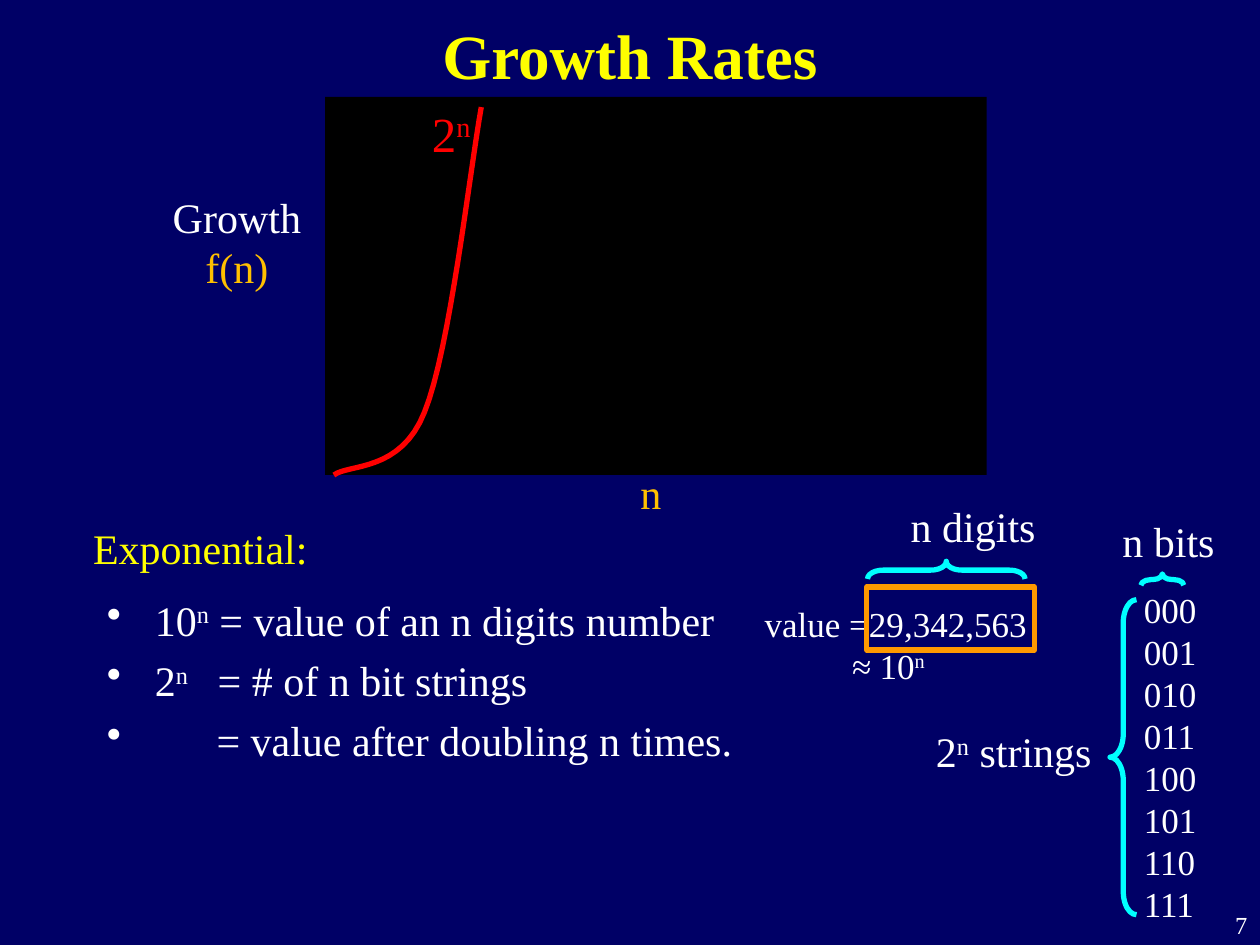
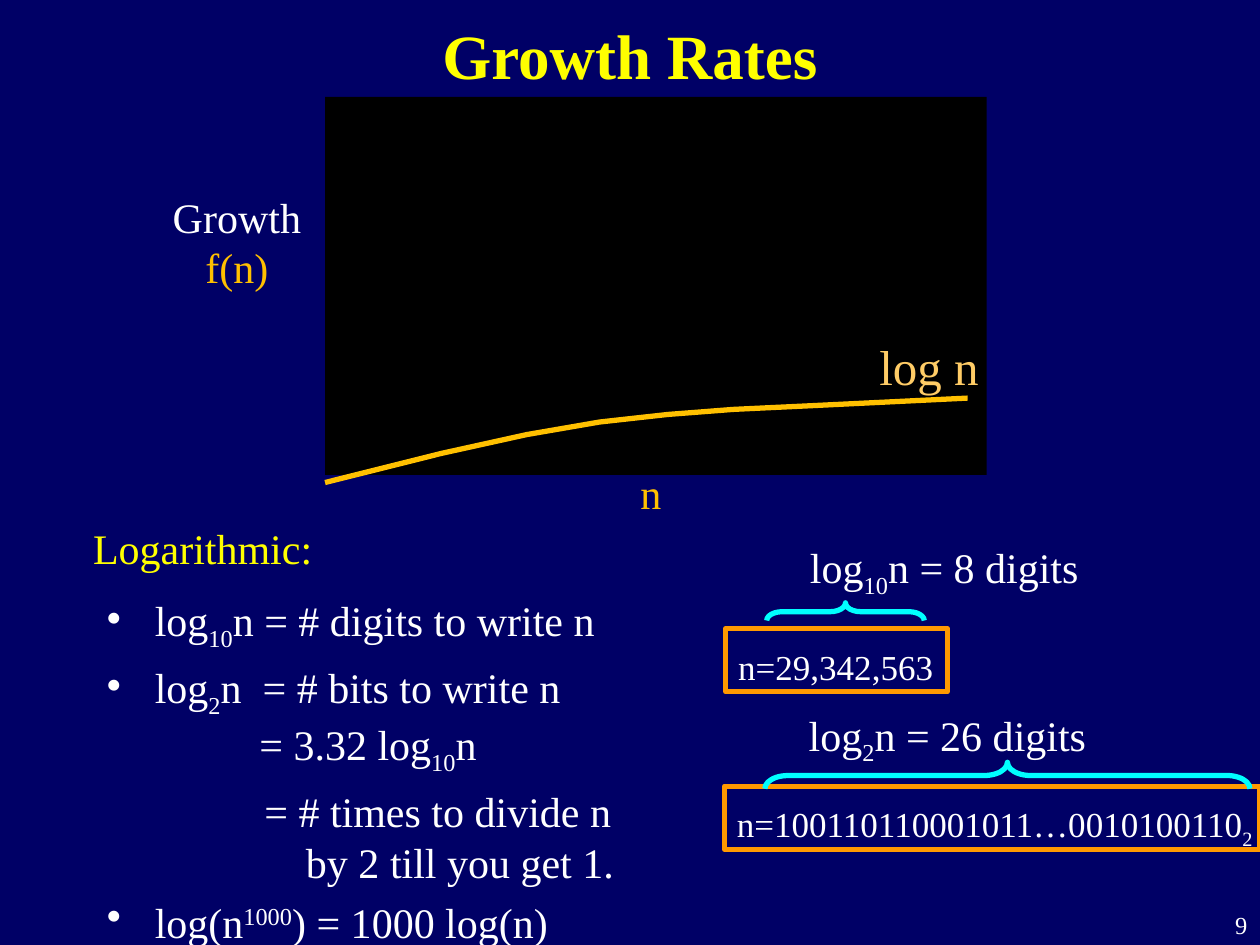
from dataclasses import dataclass, field
from typing import Any

from pptx import Presentation
from pptx import util as u
from pptx.dml.color import RGBColor
from pptx.enum import shapes, text
from pptx.oxml import ns, xmlchemy

PX = 9144
FONT = "Times New Roman"
NAVY = RGBColor(0x00, 0x00, 0x66)
BLACK = RGBColor(0x00, 0x00, 0x00)
WHITE = RGBColor(0xFF, 0xFF, 0xFF)
YELLOW = RGBColor(0xFF, 0xFF, 0x00)
GOLD = RGBColor(0xFF, 0xC0, 0x00)
SAND = RGBColor(0xFF, 0xCC, 0x66)
ORANGE = RGBColor(0xFF, 0x99, 0x00)
CYAN = RGBColor(0x00, 0xFF, 0xFF)
RED = RGBColor(0xFF, 0x00, 0x00)
LEFT, MID, RIGHT = text.PP_ALIGN.LEFT, text.PP_ALIGN.CENTER, text.PP_ALIGN.RIGHT
HANG = 38
GAP = u.Pt(5.5)

Box = tuple[int, int, int, int]
Point = tuple[float, float]


@dataclass
class Run:
    words: str
    marks: dict[str, str] = field(default_factory=dict)


@dataclass
class Para:
    runs: list[Run | str]
    left: int = 0
    dot: bool = False
    gap: int = 0
    color: RGBColor | None = None


@dataclass
class Label:
    box: Box
    paras: list[Para]
    size: int = 24
    color: RGBColor = WHITE
    align: Any = LEFT
    bold: bool = False
    wrap: bool = False
    grow: bool = True
    side: int = 10


@dataclass
class Brace:
    box: Box
    turn: int = 90


@dataclass
class Curve:
    points: list[Point]
    color: RGBColor


def sup(words: str) -> Run:
    return Run(words, {"baseline": "30000"})


def sub(words: str) -> Run:
    return Run(words, {"baseline": "-25000"})


def wide(points: int) -> Run:
    return Run(" ", {"spc": str(points * 100)})


def line(*runs: Run | str, **style: Any) -> Para:
    return Para(list(runs), **style)


def item(*runs: Run | str, left: int = HANG, gap: int = GAP) -> Para:
    return Para(list(runs), left, True, gap)


def apply(target: Any, values: dict[str, Any]) -> None:
    for name, value in values.items():
        setattr(target, name, value)


def scale(box: Box) -> list[int]:
    return [n * PX for n in box]


def write(slide: Any, label: Label) -> None:
    frame = slide.shapes.add_textbox(*scale(label.box)).text_frame
    fit = text.MSO_AUTO_SIZE
    apply(frame, {
        "word_wrap": label.wrap,
        "auto_size": fit.SHAPE_TO_FIT_TEXT if label.grow else fit.NONE,
        "vertical_anchor": text.MSO_ANCHOR.TOP,
        "margin_left": label.side * PX, "margin_right": label.side * PX,
        "margin_top": 5 * PX, "margin_bottom": 5 * PX,
    })
    for i, para in enumerate(label.paras):
        p = frame.add_paragraph() if i else frame.paragraphs[0]
        apply(p, {"alignment": label.align, "space_before": para.gap})
        props = p._p.get_or_add_pPr()
        props.set("marL", str(para.left * PX))
        props.set("indent", str(-para.left * PX if para.dot else 0))
        if para.dot:
            bullet = xmlchemy.OxmlElement("a:buChar")
            bullet.set("char", "•")
            props.append(bullet)
        for part in para.runs:
            run = part if isinstance(part, Run) else Run(part)
            r = p.add_run()
            r.text = run.words
            apply(r.font, {"name": FONT, "size": u.Pt(label.size), "bold": label.bold})
            r.font.color.rgb = para.color or label.color
            for name, value in run.marks.items():
                r._r.get_or_add_rPr().set(name, value)


def paint(shape: Any, fill: RGBColor | None, edge: RGBColor | None) -> None:
    shape.shadow.inherit = False
    if fill is None:
        shape.fill.background()
    else:
        shape.fill.solid()
        shape.fill.fore_color.rgb = fill
    if edge is None:
        shape.line.fill.background()
    else:
        shape.line.color.rgb = edge
        shape.line.width = u.Pt(3)


def frame(slide: Any, box: Box, fill: RGBColor | None, edge: RGBColor | None) -> None:
    shape = slide.shapes.add_shape(shapes.MSO_SHAPE.RECTANGLE, *scale(box))
    paint(shape, fill, edge)


def brace(slide: Any, mark: Brace) -> None:
    shape = slide.shapes.add_shape(shapes.MSO_SHAPE.LEFT_BRACE, *scale(mark.box))
    shape.rotation = mark.turn
    shape.adjustments[0] = 0.875
    paint(shape, None, CYAN)


def draw(slide: Any, curve: Curve) -> None:
    spots = [(round(x * PX), round(y * PX)) for x, y in curve.points]
    path = slide.shapes.build_freeform(*spots[0])
    path.add_line_segments(spots[1:], close=False)
    paint(path.convert_to_shape(), None, curve.color)


def bend(a: Point, b: Point, c: Point, d: Point, steps: int = 16) -> list[Point]:
    def mix(t: float, k: int) -> float:
        s = 1 - t
        return s**3 * a[k] + 3 * s * s * t * b[k] + 3 * s * t * t * c[k] + t**3 * d[k]

    return [(mix(i / steps, 0), mix(i / steps, 1)) for i in range(steps + 1)]


@dataclass
class Page:
    number: int
    topic: str
    body: Label
    labels: list[Label]
    frames: list[Box]
    braces: list[Brace]
    curve: Curve


RISE = bend((265, 377), (277, 368), (318, 375), (337, 327))
RISE += bend((337, 327), (357, 278), (373, 135), (382, 85))[1:]
CREEP = [(768, 316), (645, 322), (582, 325), (530, 329),
         (476, 335), (418, 345), (350, 360), (258, 383)]

PAGES = [
    Page(
        7, "Exponential:",
        Label((75, 467, 548, 350), [
            item("10", sup("n"), " = value of an n digits number", gap=0),
            item("2", sup("n"), wide(11), "= # of n bit strings"),
            item("= value after doubling n times.", left=87),
        ], wrap=True, grow=False),
        [
            Label((597, 473, 230, 77), [
                line("value =29,342,563"),
                line(Run("≈ ", {"i": "1"}), "10", sup("n"), left=69),
            ], 20),
            Label((713, 392, 120, 50), [line("n digits")]),
            Label((898, 462, 62, 313), [line(f"{n:03b}") for n in range(8)], 20),
            Label((881, 404, 94, 50), [line("n bits")]),
            Label((733, 571, 149, 50), [line("2", sup("n"), " strings")]),
            Label((333, 77, 53, 57), [line("2", sup("n"))], 28, RED),
        ],
        [(688, 466, 133, 50)],
        [Brace((744, 390, 14, 125)), Brace((918, 443, 9, 34)), Brace((881, 476, 21, 250), 0)],
        Curve(RISE, RED),
    ),
    Page(
        9, "Logarithmic:",
        Label((75, 467, 475, 350), [
            item("log", sub("10"), "n = # digits to write n", gap=0),
            item("log", sub("2"), "n", wide(6), "= # bits to write n"),
            line("= 3.32 log", sub("10"), "n", left=121),
            line("= # times to divide n", left=125, gap=GAP),
            line("by 2 till you get 1.", left=158),
            item("log(n", sup("1000"), ") = 1000 log(n)"),
        ], wrap=True, grow=False),
        [
            Label((668, 262, 140, 57), [line("log n")], 28, SAND, side=30),
            Label((576, 507, 176, 44), [line("n=29,342,563")], 20),
            Label((633, 425, 238, 50), [line("log", sub("10"), "n = 8 digits")]),
            Label((575, 632, 434, 44), [line("n=100110110001011…0010100110", sub("2"))], 20),
            Label((632, 558, 244, 50), [line("log", sub("2"), "n = 26 digits")]),
        ],
        [(576, 499, 176, 50), (575, 624, 425, 50)],
        [Brace((664, 423, 14, 125)), Brace((789, 423, 21, 385))],
        Curve(CREEP, GOLD),
    ),
]


def base(slide: Any, page: Page) -> None:
    frame(slide, (258, 77, 525, 300), BLACK, None)
    for label in (
        Label((950, 717, 50, 33), [line(str(page.number))], 14, align=RIGHT,
              wrap=True, grow=False),
        Label((498, 366, 37, 50), [line("n")], color=GOLD, align=MID),
        Label((92, 147, 192, 91), [line("Growth"), line("f(n)", color=GOLD)],
              align=MID, wrap=True),
        Label((75, 8, 850, 125), [line("Growth Rates")], 36, YELLOW, MID, True,
              wrap=True, grow=False),
        Label((64, 410, 253, 50), [line(page.topic)], color=YELLOW, wrap=True),
    ):
        write(slide, label)


def main() -> None:
    deck = Presentation()
    apply(deck, {"slide_width": 1000 * PX, "slide_height": 750 * PX})
    back = deck.slide_master.background.fill
    back.solid()
    back.fore_color.rgb = NAVY
    for page in PAGES:
        slide = deck.slides.add_slide(deck.slide_layouts[6])
        base(slide, page)
        draw(slide, page.curve)
        for label in [page.body, *page.labels]:
            write(slide, label)
        for box in page.frames:
            frame(slide, box, None, ORANGE)
        for mark in page.braces:
            brace(slide, mark)
    deck.save("out.pptx")


if __name__ == "__main__":
    main()
